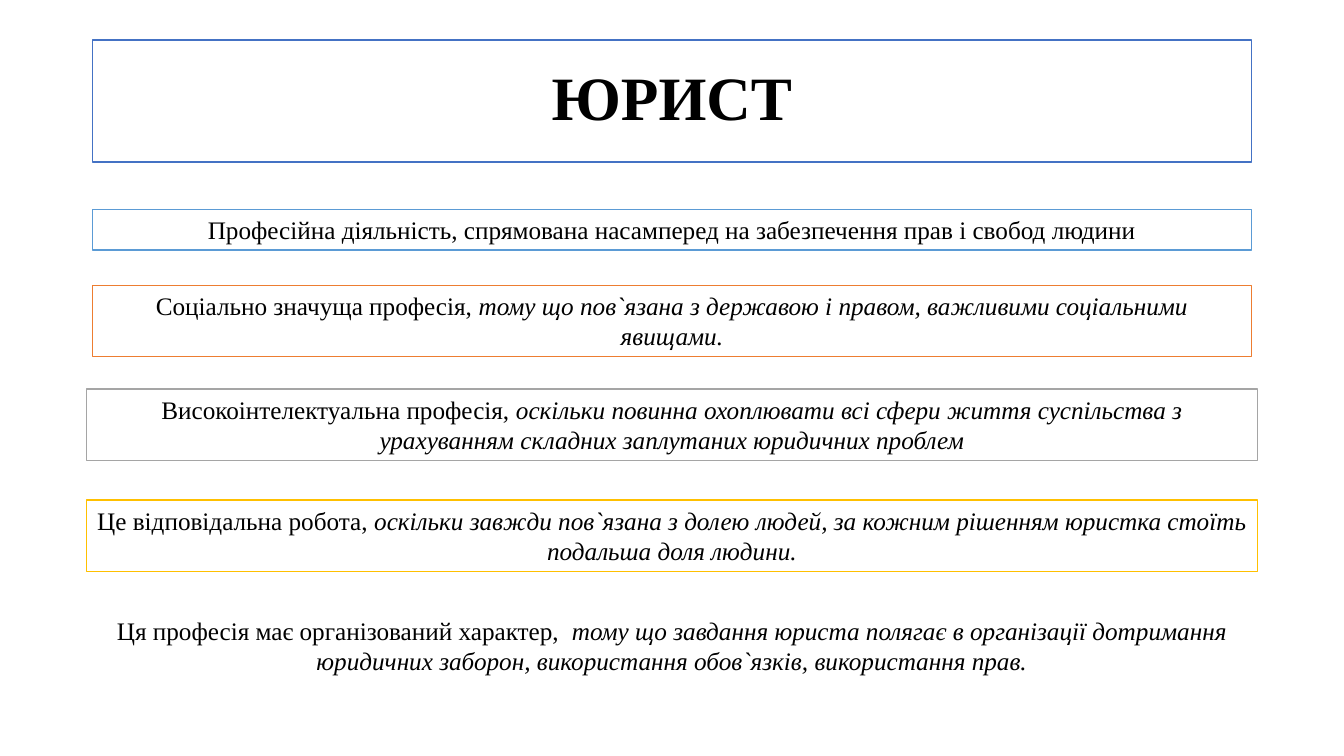
from pptx import Presentation
from pptx.dml.color import RGBColor
from pptx.enum.text import MSO_ANCHOR, MSO_AUTO_SIZE, PP_ALIGN
from pptx.util import Cm, Pt

BLACK = RGBColor(0x00, 0x00, 0x00)
WHITE = RGBColor(0xFF, 0xFF, 0xFF)
INDIGO = RGBColor(0x44, 0x72, 0xC4)
BLUE = RGBColor(0x5B, 0x9B, 0xD5)
ORANGE = RGBColor(0xED, 0x7D, 0x31)
GRAY = RGBColor(0xA5, 0xA5, 0xA5)
GOLD = RGBColor(0xFF, 0xC0, 0x00)

SLIDE_WIDTH, SLIDE_HEIGHT = 33.87, 19.05
NARROW, WIDE = 29.21, 29.5
ONE_LINE, TWO_LINES = 1.02, 1.8

STATEMENTS = [
    (5.28, NARROW, ONE_LINE, BLUE,
     "Професійна діяльність, спрямована насамперед на забезпечення прав і свобод людини", ""),
    (7.19, NARROW, TWO_LINES, ORANGE,
     "Соціально значуща професія, ",
     "тому що пов`язана з державою і правом, важливими соціальними явищами."),
    (9.8, WIDE, TWO_LINES, GRAY,
     "Високоінтелектуальна професія, ",
     "оскільки повинна охоплювати всі сфери життя суспільства з урахуванням "
     "складних заплутаних юридичних проблем"),
    (12.6, WIDE, TWO_LINES, GOLD,
     "Це відповідальна робота, ",
     "оскільки завжди пов`язана з долею людей, за кожним рішенням юристка "
     "стоїть подальша доля людини."),
    (15.37, WIDE, TWO_LINES, None,
     "Ця професія має організований характер,  ",
     "тому що завдання юриста полягає в організації дотримання юридичних "
     "заборон, використання обов`язків, використання прав."),
]


class ProfessionSlide:
    """Holds the text style and the slide, and adds its elements."""

    def __init__(self, slide):
        self.slide = slide
        self.style = {"name": "Times New Roman", "size": Pt(18), "bold": False, "italic": False}

    def add_phrase(self, paragraph, text, **changes):
        run = paragraph.add_run()
        run.text = text
        for attribute, value in {**self.style, **changes}.items():
            setattr(run.font, attribute, value)
        run.font.color.rgb = BLACK

    def outline(self, box, color):
        box.fill.solid()
        box.fill.fore_color.rgb = WHITE
        box.line.color.rgb = color
        box.line.width = Pt(1)

    def title(self, text, top, width, height, color):
        heading = self.slide.shapes.title
        place = {"left": Cm((SLIDE_WIDTH - width) / 2), "top": Cm(top),
                 "width": Cm(width), "height": Cm(height)}
        for attribute, value in place.items():
            setattr(heading, attribute, value)
        self.outline(heading, color)
        frame = heading.text_frame
        frame.auto_size = MSO_AUTO_SIZE.NONE
        frame.vertical_anchor = MSO_ANCHOR.MIDDLE
        paragraph = frame.paragraphs[0]
        paragraph.alignment = PP_ALIGN.CENTER
        paragraph.line_spacing = 0.9
        self.add_phrase(paragraph, text, size=Pt(44), bold=True)

    def statement(self, top, width, height, color, claim, reason):
        box = self.slide.shapes.add_textbox(
            Cm((SLIDE_WIDTH - width) / 2), Cm(top), Cm(width), Cm(height))
        if color is not None:
            self.outline(box, color)
        frame = box.text_frame
        frame.word_wrap = True
        frame.auto_size = MSO_AUTO_SIZE.SHAPE_TO_FIT_TEXT
        paragraph = frame.paragraphs[0]
        paragraph.alignment = PP_ALIGN.CENTER
        self.add_phrase(paragraph, claim)
        if reason:
            self.add_phrase(paragraph, reason, italic=True)


def main():
    presentation = Presentation()
    presentation.slide_width = Cm(SLIDE_WIDTH)
    presentation.slide_height = Cm(SLIDE_HEIGHT)
    title_only = presentation.slide_layouts[5]
    profession = ProfessionSlide(presentation.slides.add_slide(title_only))
    profession.title("ЮРИСТ", 1.01, NARROW, 3.07, INDIGO)
    for statement in STATEMENTS:
        profession.statement(*statement)
    presentation.save("out.pptx")


if __name__ == "__main__":
    main()
